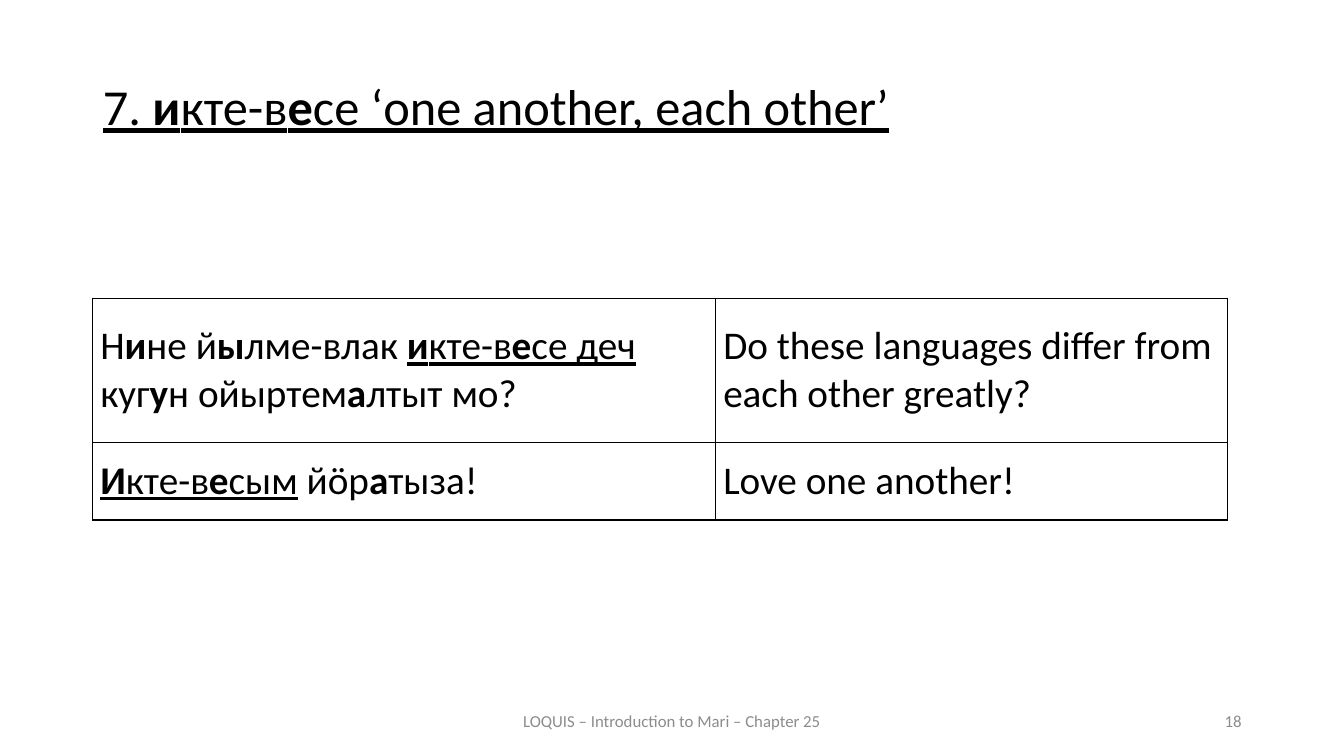
import dataclasses
import typing

import lxml.etree
import pptx
import pptx.dml.color
import pptx.enum.text
import pptx.oxml.ns
import pptx.util

Pt = pptx.util.Pt
Align = pptx.enum.text.PP_ALIGN
Anchor = pptx.enum.text.MSO_ANCHOR


@dataclasses.dataclass(frozen=True)
class Theme:
    font: str = "Calibri"
    ink: str = "000000"
    muted: str = "8C8C8C"
    head: float = 36
    body: float = 28
    small: float = 12
    rule: float = 1


@dataclasses.dataclass(frozen=True)
class Label:
    text: str
    left: float
    width: float
    align: Align


@dataclasses.dataclass(frozen=True)
class Row:
    height: float
    align: Align
    texts: tuple[str, str]


THEME = Theme()
LEFT = 66.24
HEAD = "_7. *и*кте-в*е*се ‘one another, each other’_"
WIDTHS = (445, 365.75)
ROWS = (
    Row(103, Align.LEFT, (
        "Н*и*не й*ы*лме-влак _*и*кте-в*е*се деч_ куг*у*н ойыртем*а*лтыт мо?",
        "Do these languages differ from each other greatly?",
    )),
    Row(55.5, Align.JUSTIFY, (
        "_*И*кте-в*е*сым_ йӧр*а*тыза!",
        "Love one another!",
    )),
)
LABELS = (
    Label("LOQUIS – Introduction to Mari – Chapter 25", 318, 324, Align.CENTER),
    Label("18", 678, 216, Align.RIGHT),
)


def apply(target: typing.Any, values: dict[str, typing.Any]) -> None:
    for name, value in values.items():
        setattr(target, name, value)


def write(frame: typing.Any, text: str, size: float, tint: str,
          style: dict[str, typing.Any]) -> None:
    line = frame.paragraphs[0]
    apply(line, style)
    for u, part in enumerate(text.split("_")):
        for b, bit in enumerate(part.split("*")):
            if not bit:
                continue
            run = line.add_run()
            run.text = bit
            apply(run.font, {
                "name": THEME.font,
                "size": Pt(size),
                "bold": b % 2 == 1,
                "underline": u % 2 == 1,
            })
            run.font.color.rgb = pptx.dml.color.RGBColor.from_string(tint)


def border(cell: typing.Any) -> None:
    qn = pptx.oxml.ns.qn
    props = cell._tc.get_or_add_tcPr()
    for place, side in enumerate("LRTB"):
        edge = lxml.etree.Element(qn(f"a:ln{side}"), w=str(Pt(THEME.rule)))
        fill = lxml.etree.SubElement(edge, qn("a:solidFill"))
        lxml.etree.SubElement(fill, qn("a:srgbClr"), val=THEME.ink)
        props.insert(place, edge)


def add_head(slide: typing.Any) -> None:
    title = slide.shapes.title
    apply(title, {"left": Pt(LEFT), "top": Pt(54.75),
                  "width": Pt(828), "height": Pt(59.75)})
    apply(title.text_frame, {
        "word_wrap": True,
        "auto_size": pptx.enum.text.MSO_AUTO_SIZE.NONE,
        "vertical_anchor": Anchor.TOP,
    })
    write(title.text_frame, HEAD, THEME.head, THEME.ink, {
        "alignment": Align.JUSTIFY,
        "line_spacing": 0.9,
        "space_before": Pt(12),
    })


def add_grid(slide: typing.Any) -> None:
    grid = slide.shapes.add_table(
        len(ROWS), len(WIDTHS), Pt(LEFT), Pt(213),
        Pt(sum(WIDTHS)), Pt(sum(row.height for row in ROWS))).table
    apply(grid, {"first_row": False, "horz_banding": False})
    for col, width in zip(grid.columns, WIDTHS):
        col.width = Pt(width)
    for line, row in zip(grid.rows, ROWS):
        line.height = Pt(row.height)
        for cell, text in zip(line.cells, row.texts):
            apply(cell, {
                "margin_left": Pt(5.4), "margin_right": Pt(5.4),
                "margin_top": 0, "margin_bottom": 0,
                "vertical_anchor": Anchor.MIDDLE,
            })
            cell.fill.background()
            border(cell)
            write(cell.text_frame, text, THEME.body, THEME.ink,
                  {"alignment": row.align})


def add_label(slide: typing.Any, label: Label) -> None:
    frame = slide.shapes.add_textbox(
        Pt(label.left), Pt(500.5), Pt(label.width), Pt(28.75)).text_frame
    apply(frame, {"word_wrap": True, "vertical_anchor": Anchor.MIDDLE})
    write(frame, label.text, THEME.small, THEME.muted,
          {"alignment": label.align})


def main() -> None:
    deck = pptx.Presentation()
    apply(deck, {"slide_width": Pt(960), "slide_height": Pt(540)})
    slide = deck.slides.add_slide(deck.slide_layouts.get_by_name("Title Only"))
    add_head(slide)
    add_grid(slide)
    for label in LABELS:
        add_label(slide, label)
    deck.save("out.pptx")


if __name__ == "__main__":
    main()
